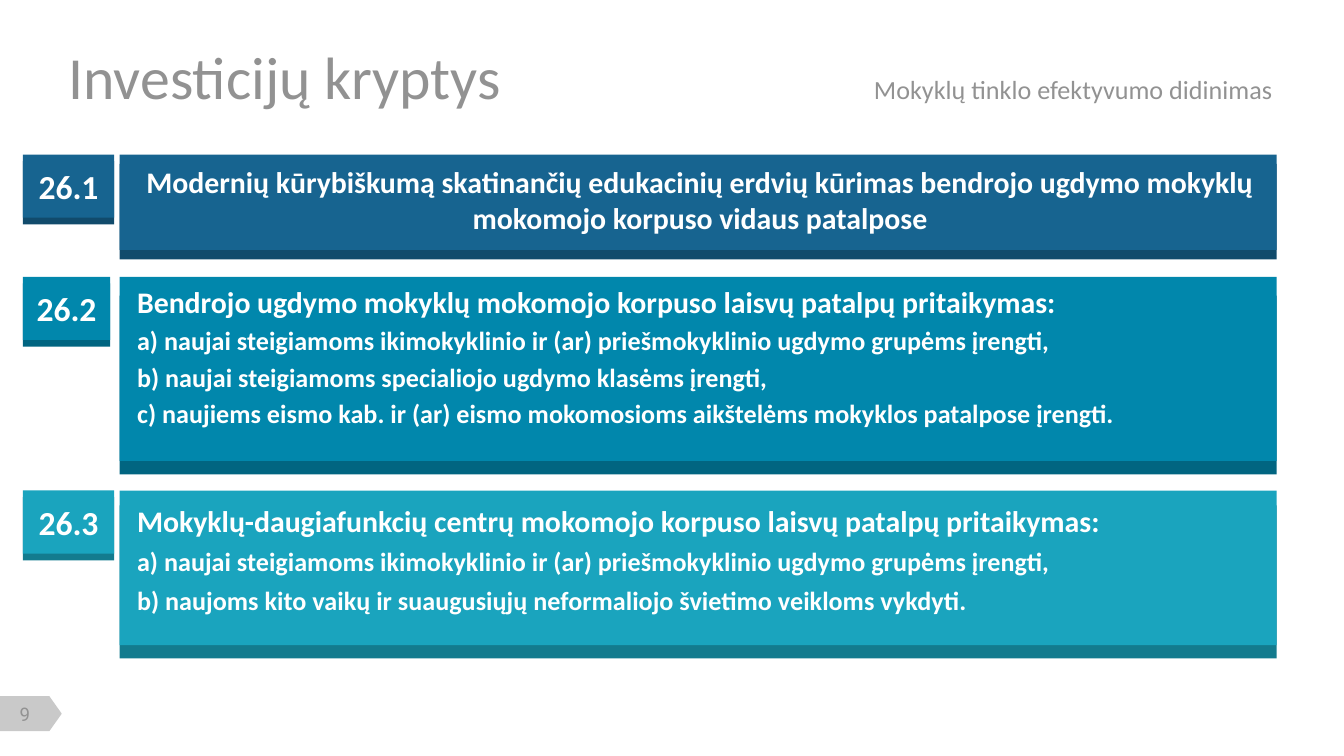
from lxml.etree import SubElement as Sub
from pptx import Presentation
from pptx.dml.color import RGBColor
from pptx.enum.shapes import MSO_SHAPE as Form
from pptx.enum.text import MSO_ANCHOR as Anchor, MSO_AUTO_SIZE as Fit, PP_ALIGN as Align
from pptx.oxml.ns import qn
from pptx.util import Inches, Pt

GREY, WHITE = "929292", "FFFFFF"
TAG_X, TAG_H = 0.17, 0.47
BAR_X, BAR_W = 0.89, 8.61


def paint(fmt, tint):
    """Give a fill a solid colour from a hex string."""
    fmt.solid()
    fmt.fore_color.rgb = RGBColor.from_string(tint)


def style(font, size, tint=WHITE, bold=True, name="Calibri"):
    """Set name, size, weight and colour of a font."""
    font.name, font.size, font.bold = name, Pt(size), bold
    paint(font.fill, tint)


def place(item, box):
    """Move and size a shape to a box in inches."""
    item.left, item.top, item.width, item.height = map(Inches, box)


def frame(item, anchor=Anchor.TOP):
    """Return a wrapped text frame without insets."""
    text = item.text_frame
    text.word_wrap, text.auto_size = True, Fit.NONE
    text.margin_left = text.margin_right = 0
    text.margin_top = text.margin_bottom = 0
    text.vertical_anchor = anchor
    return text


def block(slide, box, tint, form=Form.RECTANGLE):
    """Add a plain filled shape."""
    item = slide.shapes.add_shape(form, *map(Inches, box))
    item.shadow.inherit = False
    paint(item.fill, tint)
    item.line.fill.background()
    return item


def label(slide, box, words, size, tint=WHITE, bold=True, name="Calibri", anchor=Anchor.TOP):
    """Add a centred text box."""
    text = frame(slide.shapes.add_textbox(*map(Inches, box)), anchor)
    para = text.paragraphs[0]
    para.text, para.alignment = words, Align.CENTER
    style(para.font, size, tint, bold, name)


def tag(slide, top, width, words, face, edge):
    """Add a numbered tag with a darker lower edge."""
    block(slide, (TAG_X, top + 0.05, width, TAG_H), edge)
    item = block(slide, (TAG_X, top, width, TAG_H), face)
    item.text_frame.vertical_anchor = Anchor.MIDDLE
    para = item.text_frame.paragraphs[0]
    para.text, para.alignment = words, Align.CENTER
    style(para.font, 18)


def bar(slide, top, height, low, depth, face, edge):
    """Add a wide bar over its darker lower edge."""
    block(slide, (BAR_X, low, BAR_W, depth), edge)
    block(slide, (BAR_X, top, BAR_W, height), face)


def points(slide, hold, box, lines, gap):
    """Fill a body placeholder with a heading and its points."""
    place(hold, box)
    slide.shapes.element.append(hold.element)
    text = frame(hold)
    text.text = "\n".join(lines)
    for at, para in enumerate(text.paragraphs):
        props = para._p.get_or_add_pPr()
        props.set("marL", "0")
        props.set("indent", "0")
        Sub(props, qn("a:buNone"))
        para.alignment = Align.LEFT
        para.space_before = Pt(gap if at else 0)
        style(para.font, 14 if at else 16)


def heading(hold, left, right):
    """Fill the title, with its second part at a right tab."""
    place(hold, (0.51, 0.37, 9.06, 0.39))
    para = frame(hold, Anchor.MIDDLE).paragraphs[0]
    para.alignment = Align.LEFT
    tabs = Sub(para._p.get_or_add_pPr(), qn("a:tabLst"))
    Sub(tabs, qn("a:tab"), pos=str(Inches(8.96)), algn="r")
    for words, size in ((left, 32), ("\t" + right, 14)):
        run = para.add_run()
        run.text = words
        style(run.font, size, GREY, False)


def number(slide, words):
    """Add the page number on its marker."""
    mark = block(slide, (0.1, 5.08, 0.26, 0.46), "C9C9C9", Form.FLOWCHART_OFFPAGE_CONNECTOR)
    mark.rotation = 270
    label(slide, (0.02, 5.23, 0.33, 0.17), words, 10, GREY, False, "Roboto", Anchor.MIDDLE)


def main():
    """Build the slide and save it."""
    deck = Presentation()
    deck.slide_width = Inches(10)
    deck.slide_height = deck.slide_width * 9 // 16
    slide = deck.slides.add_slide(deck.slide_layouts[3])
    title, first, second = slide.placeholders
    heading(title, "Investicijų kryptys", "Mokyklų tinklo efektyvumo didinimas")
    number(slide, "9")
    rows = (
        ("26.1", 1.15, 0.71, 1.22, 0.71, 0.68, "176490", "114B6C"),
        ("26.2", 2.06, 1.37, 2.2, 1.33, 0.65, "0187AC", "016581"),
        ("26.3", 3.65, 1.15, 3.76, 1.14, 0.68, "1AA4BE", "137B8E"),
    )
    for words, top, height, low, depth, width, face, edge in rows:
        bar(slide, top, height, low, depth, face, edge)
        tag(slide, top, width, words, face, edge)
    label(slide, (0.92, 1.22, 8.58, 0.54),
          "Modernių kūrybiškumą skatinančių edukacinių erdvių kūrimas bendrojo ugdymo mokyklų "
          "mokomojo korpuso vidaus patalpose", 16)
    groups = "a) naujai steigiamoms ikimokyklinio ir (ar) priešmokyklinio ugdymo grupėms įrengti,"
    points(slide, first, (1.02, 2.11, 8.56, 1.34), (
        "Bendrojo ugdymo mokyklų mokomojo korpuso laisvų patalpų pritaikymas:",
        groups,
        "b) naujai steigiamoms specialiojo ugdymo klasėms įrengti,",
        "c) naujiems eismo kab. ir (ar) eismo mokomosioms aikštelėms mokyklos patalpose įrengti.",
    ), 2.8)
    points(slide, second, (1.02, 3.74, 8.58, 0.85), (
        "Mokyklų-daugiafunkcių centrų mokomojo korpuso laisvų patalpų pritaikymas:",
        groups,
        "b) naujoms kito vaikų ir suaugusiųjų neformaliojo švietimo veikloms vykdyti.",
    ), 3.8)
    deck.save("out.pptx")


if __name__ == "__main__":
    main()
